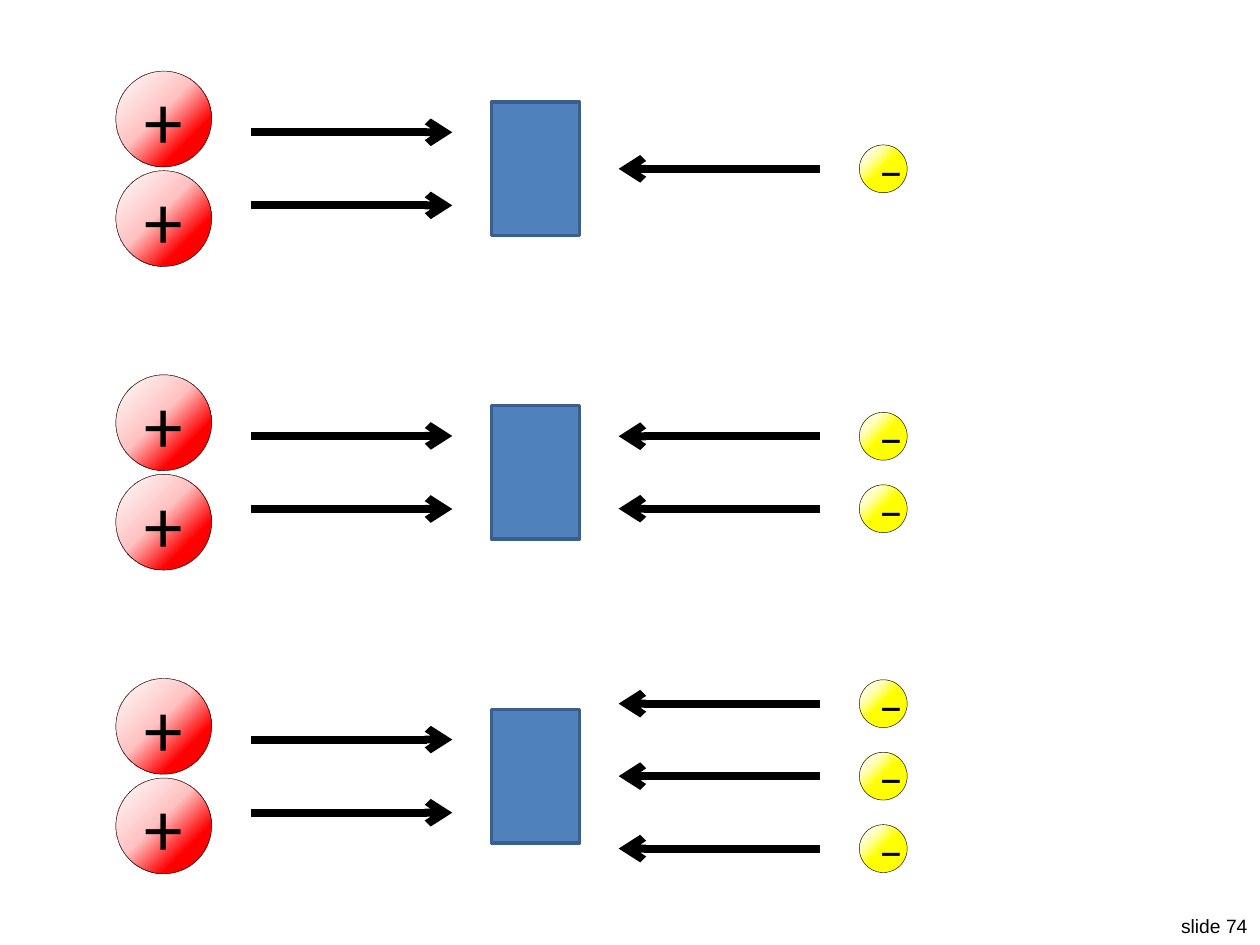
from pptx import Presentation
from pptx import util as u
from pptx import oxml
from pptx.dml import color
from pptx.enum import shapes, text
from pptx.oxml import ns

COLORS = {"black": "000000", "block": "4F81BD", "block edge": "3A5F8C"}
# Sign, text size, diameter, left edge and gradient stops (percent, colour)
PROTON = ("+", 44, 0.76, 0.92,
          [(0, "FFFFFF"), (45, "FFC1C1"), (74, "FF0000"), (100, "FF0000")])
ELECTRON = ("‒", 28, 0.38, 6.82,
            [(0, "FFFFFF"), (26, "FFFFBD"), (49, "FFFF00"), (100, "FFFF00")])

deck = Presentation()
deck.slide_width, deck.slide_height = u.Inches(10), u.Inches(7.5)
page = deck.slides.add_slide(deck.slide_layouts[6])


def add_charge(kind, center_y):
    sign, size, diameter, left, stops = kind
    ball = page.shapes.add_shape(
        shapes.MSO_SHAPE.OVAL, u.Inches(left), u.Inches(center_y - diameter / 2),
        u.Inches(diameter), u.Inches(diameter))
    ball.shadow.inherit = False
    ball.line.color.rgb = color.RGBColor.from_string(COLORS["black"])
    ball.line.width = u.Pt(0.25)
    # Radial gradient that spreads from the top left corner
    stop_xml = "".join(f'<a:gs pos="{pos * 1000}"><a:srgbClr val="{rgb}"/></a:gs>'
                       for pos, rgb in stops)
    gradient = oxml.parse_xml(
        f'<a:gradFill {ns.nsdecls("a")} rotWithShape="1"><a:gsLst>{stop_xml}</a:gsLst>'
        '<a:path path="circle"><a:fillToRect r="100000" b="100000"/></a:path></a:gradFill>')
    ball._element.spPr.insert(2, gradient)
    frame = ball.text_frame
    frame.vertical_anchor = text.MSO_ANCHOR.MIDDLE
    para = frame.paragraphs[0]
    para.alignment = text.PP_ALIGN.CENTER
    span = para.add_run()
    span.text = sign
    span.font.name, span.font.size = "Calibri", u.Pt(size)
    span.font.color.rgb = color.RGBColor.from_string(COLORS["black"])


def add_arrow(start_x, end_x, y):
    arrow = page.shapes.add_connector(
        shapes.MSO_CONNECTOR.STRAIGHT, u.Inches(start_x), u.Inches(y),
        u.Inches(end_x), u.Inches(y))
    arrow.line.color.rgb = color.RGBColor.from_string(COLORS["black"])
    arrow.line.width = u.Pt(4.5)
    arrow.line._get_or_add_ln().append(
        oxml.parse_xml(f'<a:tailEnd {ns.nsdecls("a")} type="arrow"/>'))
    arrow._element.spPr.append(oxml.parse_xml(f'<a:effectLst {ns.nsdecls("a")}/>'))


# Three rows: two protons from the left, one to three electrons from the right
for row in range(3):
    middle = 1.34 + row * 2.41

    # Central block
    block = page.shapes.add_shape(
        shapes.MSO_SHAPE.RECTANGLE, u.Inches(3.9), u.Inches(middle - 0.53),
        u.Inches(0.7), u.Inches(1.06))
    block.shadow.inherit = False
    block.fill.solid()
    block.fill.fore_color.rgb = color.RGBColor.from_string(COLORS["block"])
    block.line.color.rgb = color.RGBColor.from_string(COLORS["block edge"])
    block.line.width = u.Pt(2)

    # Protons
    for side in (-1, 1):
        add_charge(PROTON, middle + side * 0.395)
        add_arrow(1.99, 3.59, middle + side * 0.29)

    # Electrons
    for index in range(row + 1):
        y = middle + (index - row / 2) * 0.575
        add_charge(ELECTRON, y)
        add_arrow(6.51, 4.91, y)

# Slide number
box = page.shapes.add_textbox(u.Inches(9.25), u.Inches(7.21), u.Inches(0.75), u.Inches(0.29))
box.text_frame.word_wrap = False
box.text_frame.auto_size = text.MSO_AUTO_SIZE.SHAPE_TO_FIT_TEXT
para = box.text_frame.paragraphs[0]
para.alignment = text.PP_ALIGN.RIGHT
span = para.add_run()
span.text = "slide 74"
span.font.name, span.font.size = "Arial", u.Pt(11)
span.font.color.rgb = color.RGBColor.from_string(COLORS["black"])

deck.save("out.pptx")
